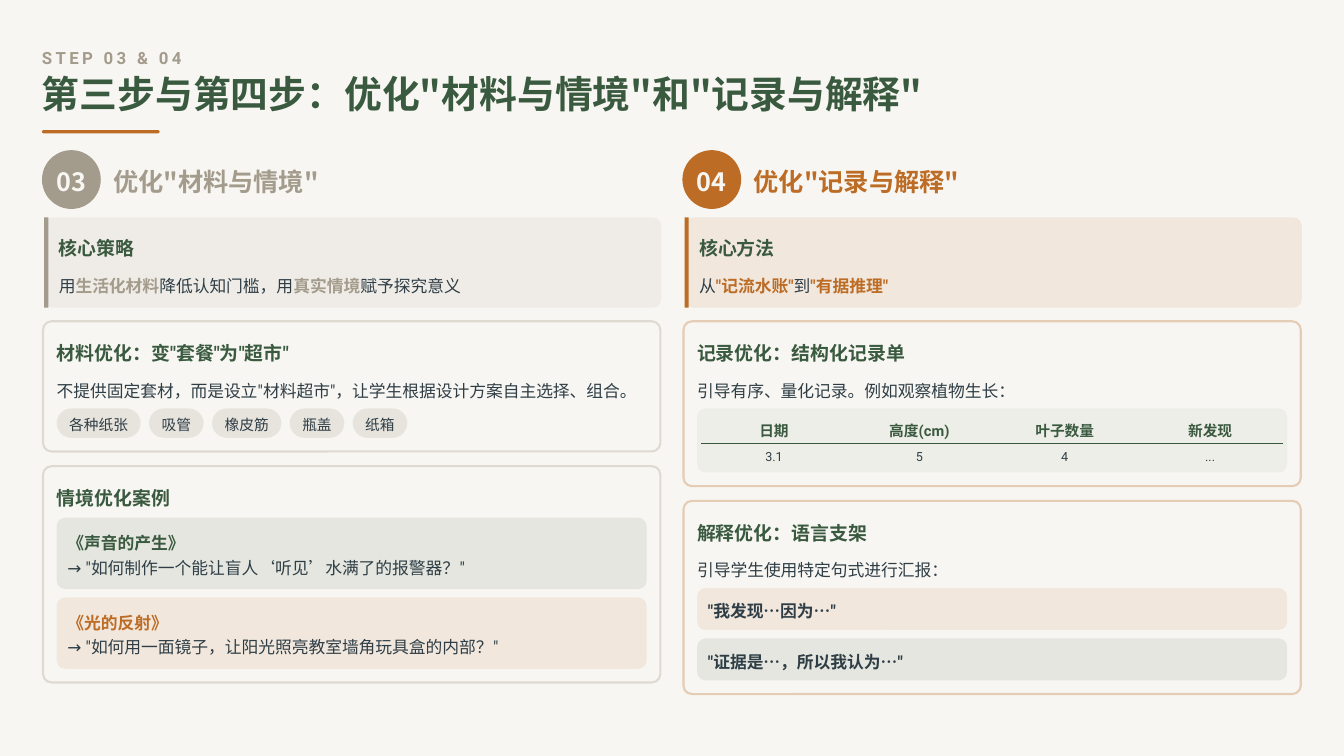
from lxml import etree
from pptx import Presentation
from pptx.dml.color import RGBColor
from pptx.enum.lang import MSO_LANGUAGE_ID
from pptx.enum.shapes import MSO_SHAPE
from pptx.enum.text import MSO_ANCHOR, MSO_AUTO_SIZE, PP_ALIGN
from pptx.oxml.ns import qn
from pptx.util import Pt

RECT, ROUND, OVAL = MSO_SHAPE.RECTANGLE, MSO_SHAPE.ROUNDED_RECTANGLE, MSO_SHAPE.OVAL
LEFT, CENTER = PP_ALIGN.LEFT, PP_ALIGN.CENTER
MIDDLE, NO_FIT = MSO_ANCHOR.MIDDLE, MSO_AUTO_SIZE.NONE
CHINESE = MSO_LANGUAGE_ID.SIMPLIFIED_CHINESE
PAPER = RGBColor(0xF8, 0xF6, 0xF2)
GREEN = RGBColor(0x3A, 0x5A, 0x40)
INK = RGBColor(0x2F, 0x3E, 0x46)
STONE = RGBColor(0xA3, 0x9B, 0x8B)
ORANGE = RGBColor(0xBC, 0x6C, 0x25)
SANS, CJK = "Roboto", "Noto Sans CJK SC"
NO_STYLE = "{2D5ABB26-0587-4C30-8999-92F81FD0307C}"

KICKER = "STEP 03 & 04"
TITLE = "第三步与第四步：优化\"材料与情境\"和\"记录与解释\""
COLUMNS = [
    {"number": "03", "name": "优化\"材料与情境\"", "color": STONE,
     "callout": ("核心策略", ["用", "生活化材料", "降低认知门槛，用", "真实情境", "赋予探究意义"]),
     "cards": [
         {"height": 124, "head": "材料优化：变\"套餐\"为\"超市\"",
          "body": "不提供固定套材，而是设立\"材料超市\"，让学生根据设计方案自主选择、组合。",
          "chips": ["各种纸张", "吸管", "橡皮筋", "瓶盖", "纸箱"]},
         {"height": 206, "head": "情境优化案例", "panel_height": 68,
          "panels": [
              (GREEN, [("《声音的产生》", GREEN, True),
                       ("→ \"如何制作一个能让盲人‘听见’水满了的报警器？\"", INK, False)]),
              (ORANGE, [("《光的反射》", ORANGE, True),
                        ("→ \"如何用一面镜子，让阳光照亮教室墙角玩具盒的内部？\"", INK, False)])]},
     ]},
    {"number": "04", "name": "优化\"记录与解释\"", "color": ORANGE,
     "callout": ("核心方法", ["从", "\"记流水账\"", "到", "\"有据推理\""]),
     "cards": [
         {"height": 157, "head": "记录优化：结构化记录单",
          "body": "引导有序、量化记录。例如观察植物生长：",
          "table": [["日期", "高度(cm)", "叶子数量", "新发现"], ["3.1", "5", "4", "..."]]},
         {"height": 184, "head": "解释优化：语言支架", "panel_height": 40,
          "body": "引导学生使用特定句式进行汇报：",
          "panels": [(ORANGE, [("\"我发现…因为…\"", INK, True)]),
                     (GREEN, [("\"证据是…，所以我认为…\"", INK, True)])]},
     ]},
]
MARGIN, COLUMN_STEP, WIDTH, INNER = 40, 610, 588, 562
CALLOUT_TOP, CARD_TOP, CARD_GAP, ITEM_GAP = 207, 306, 14, 8

prs = Presentation()
prs.slide_width, prs.slide_height = Pt(1280.16), Pt(720)
s = prs.slides.add_slide(prs.slide_layouts[5])
s.background.fill.solid()
s.background.fill.fore_color.rgb = PAPER


def fade(parent, percent):
    color = next(parent.iter(qn("a:srgbClr")))
    etree.SubElement(color, qn("a:alpha")).set("val", str(percent * 1000))


def add_run(p, text, size, color, bold=False, name=SANS):
    r = p.add_run()
    r.text = text
    r.font.color.rgb = color
    style = {"size": Pt(size), "bold": bold, "name": name, "language_id": CHINESE}
    for key, value in style.items():
        setattr(r.font, key, value)
    r.font._element.find(qn("a:latin")).addnext(
        r.font._element.makeelement(qn("a:ea"), {"typeface": CJK}))
    return r


def frame(tf, inset=0, wrap=True):
    layout = {"margin_left": Pt(inset), "margin_right": 0, "margin_top": 0, "margin_bottom": 0,
              "word_wrap": wrap, "auto_size": NO_FIT, "vertical_anchor": MIDDLE}
    for key, value in layout.items():
        setattr(tf, key, value)


def write(tf, lines, spacing, align=LEFT):
    for i, runs in enumerate(lines):
        p = tf.add_paragraph() if i else tf.paragraphs[0]
        p.alignment, p.line_spacing = align, spacing
        for run in runs:
            add_run(p, *run)


def add_text(x, y, w, h, runs, spacing):
    tf = s.shapes.add_textbox(Pt(x), Pt(y), Pt(w), Pt(h)).text_frame
    frame(tf)
    write(tf, [runs], spacing)
    return tf


def add_block(kind, x, y, w, h, fill, alpha=100, radius=8):
    sp = s.shapes.add_shape(kind, Pt(x), Pt(y), Pt(w), Pt(h))
    sp.shadow.inherit = False
    sp.fill.solid()
    sp.fill.fore_color.rgb = fill
    sp.line.fill.background()
    if alpha < 100:
        fade(sp._element.spPr, alpha)
    if kind == ROUND:
        sp.adjustments[0] = min(radius / min(w, h), 0.5)
    return sp


def add_head_and_body(x, y, head, runs):
    add_text(x, y, 571, 28, [(head, 18, GREEN, True)], 1.3)
    if runs:
        add_text(x, y + 36, 571, 26, runs, 1.4)


def add_chips(x, y, labels):
    for label in labels:
        w = 24 + 14 * len(label)
        tf = add_block(ROUND, x, y, w, 28, STONE, 20, 14).text_frame
        frame(tf, wrap=False)
        write(tf, [[(label, 14, INK)]], 1.2, CENTER)
        x += w + ITEM_GAP


def add_panels(x, y, h, panels):
    for i, (color, lines) in enumerate(panels):
        tf = add_block(ROUND, x, y + i * (h + ITEM_GAP), INNER, h, color, 10).text_frame
        frame(tf, inset=8)
        write(tf, [[(text, 16, ink, bold)] for text, ink, bold in lines], 1.2)


def add_record(x, y, rows):
    add_block(ROUND, x, y, INNER, 61, GREEN, 5)
    shape = s.shapes.add_table(2, 4, Pt(x + 4), Pt(y + 3.5), Pt(INNER - 8), Pt(54))
    table = shape.table
    table._tbl.tblPr.find(qn("a:tableStyleId")).text = NO_STYLE
    table.first_row = table.horz_banding = False
    formats = [(29.5, 14, GREEN, True, 1.2), (24.5, 12, INK, False, 1.1)]
    for i, (h, size, color, bold, spacing) in enumerate(formats):
        table.rows[i].height = Pt(h)
        for j, text in enumerate(rows[i]):
            cell = table.cell(i, j)
            cell.fill.background()
            cell.margin_left = cell.margin_right = cell.margin_top = cell.margin_bottom = 0
            cell.vertical_anchor = MIDDLE
            write(cell.text_frame, [[(text, size, color, bold)]], spacing, CENTER)
            if i == 0:
                border = etree.Element(qn("a:lnB"), w=str(Pt(1)))
                fill = etree.SubElement(border, qn("a:solidFill"))
                etree.SubElement(fill, qn("a:srgbClr"), val=str(GREEN))
                fade(border, 20)
                cell._tc.get_or_add_tcPr().insert(0, border)


def add_card(x, y, card, color):
    sp = add_block(ROUND, x, y, WIDTH, card["height"], PAPER)
    sp.line.color.rgb = color
    sp.line.width = Pt(2)
    fade(sp._element.spPr.find(qn("a:ln")), 30)
    body = card.get("body")
    add_head_and_body(x + 13, y + 13, card["head"], [(body, 16, INK)] if body else [])
    left, top = x + 13, y + (83 if body else 49)
    if "chips" in card:
        add_chips(left, top, card["chips"])
    if "table" in card:
        add_record(left, top, card["table"])
    if "panels" in card:
        add_panels(left, top, card["panel_height"], card["panels"])


def add_column(x, column):
    color = column["color"]
    tf = add_block(OVAL, x, 143, 56, 56, color).text_frame
    frame(tf, wrap=False)
    write(tf, [[(column["number"], 24, PAPER, True, CJK)]], 1.1, CENTER)
    add_text(x + 68, 155, 200, 32, [(column["name"], 24, color, True, CJK)], 1.1)
    add_block(ROUND, x + 2, CALLOUT_TOP, WIDTH, 86, color, 10)
    add_block(RECT, x + 2, CALLOUT_TOP, 4, 86, color)
    head, parts = column["callout"]
    runs = [(text, 16, color if i % 2 else INK, i % 2 == 1) for i, text in enumerate(parts)]
    add_head_and_body(x + 16, CALLOUT_TOP + 12, head, runs)
    y = CARD_TOP
    for card in column["cards"]:
        add_card(x + 1, y, card, color)
        y += card["height"] + CARD_GAP


kicker = add_text(MARGIN, 40, 1208, 24, [(KICKER, 16, STONE, True)], 1.3)
kicker.paragraphs[0].runs[0].font._element.set("spc", "320")
title = s.shapes.title
title.left, title.top, title.width, title.height = Pt(MARGIN), Pt(72), Pt(1218), Pt(40)
frame(title.text_frame)
write(title.text_frame, [[(TITLE, 36, GREEN, True, CJK)]], 0.9)
add_block(ROUND, MARGIN, 124, 112, 3, ORANGE, radius=1.5)
for i, column in enumerate(COLUMNS):
    add_column(MARGIN + i * COLUMN_STEP, column)
prs.save("out.pptx")
